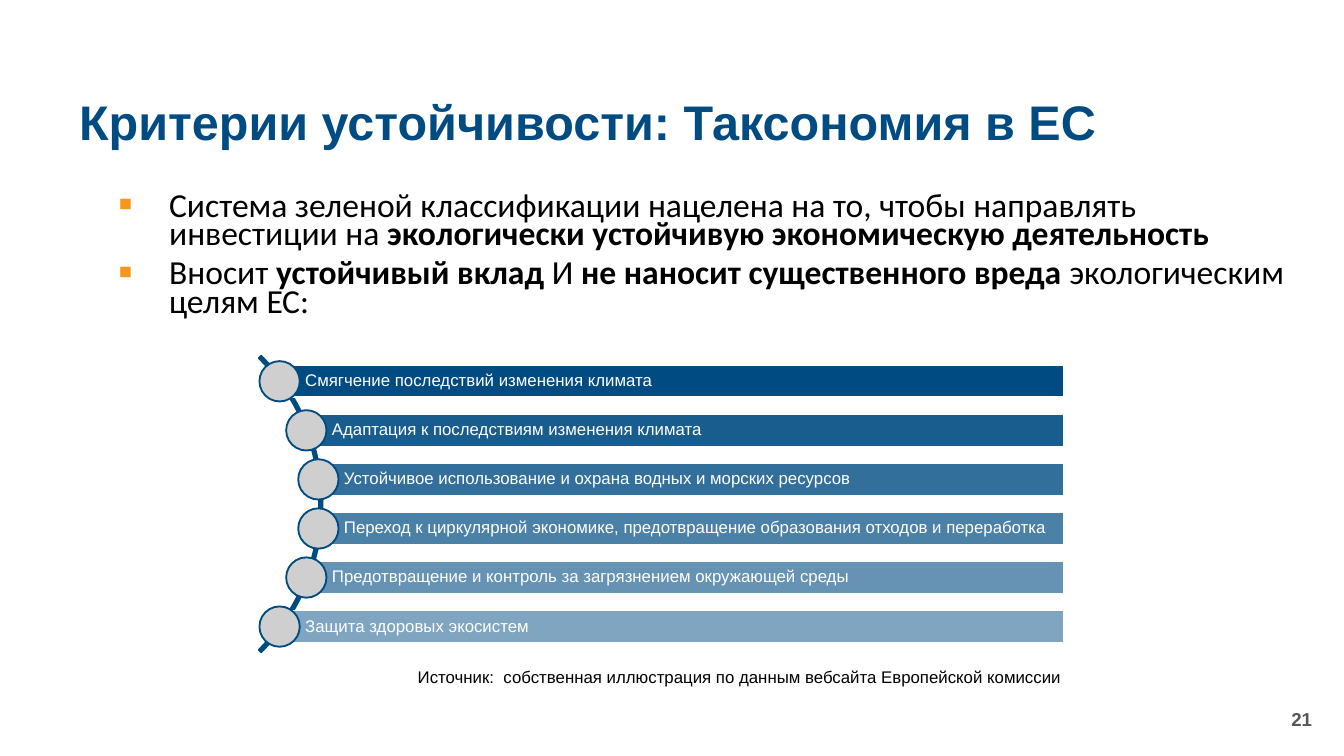
import math

import lxml.etree
import pptx
import pptx.dml.color
import pptx.enum.shapes
import pptx.enum.text
import pptx.oxml.ns
import pptx.util

Inches = pptx.util.Inches
Pt = pptx.util.Pt
Shapes = pptx.enum.shapes.MSO_SHAPE
Align = pptx.enum.text.PP_ALIGN
Anchor = pptx.enum.text.MSO_ANCHOR

BLUE = "004C82"
WHITE = "FFFFFF"
BLACK = "000000"

BULLETS = [
    [("Система зеленой классификации нацелена на то, чтобы направлять инвестиции на ", False),
     ("экологически устойчивую экономическую деятельность", True)],
    [("Вносит ", False),
     ("устойчивый вклад ", True),
     ("И ", False),
     ("не наносит существенного вреда ", True),
     ("экологическим целям ЕС:", False)],
]
GOALS = [
    "Смягчение последствий изменения климата",
    "Адаптация к последствиям изменения климата",
    "Устойчивое использование и охрана водных и морских ресурсов",
    "Переход к циркулярной экономике, предотвращение образования отходов и переработка",
    "Предотвращение и контроль за загрязнением окружающей среды",
    "Защита здоровых экосистем",
]


def color(value):
    return pptx.dml.color.RGBColor.from_string(value)


def add_child(parent, tag, **attributes):
    child = lxml.etree.SubElement(parent, pptx.oxml.ns.qn(tag))
    for name, value in attributes.items():
        child.set(name, value)
    return child


def add_span(para, text, size, ink, font="Arial", bold=False):
    span = para.add_run()
    span.text = text
    span.font.name = font
    span.font.size = Pt(size)
    span.font.bold = bold
    span.font.color.rgb = color(ink)


def add_box(page, left, top, width, height, anchor=Anchor.TOP):
    box = page.shapes.add_textbox(Inches(left), Inches(top), Inches(width), Inches(height))
    box.text_frame.word_wrap = True
    box.text_frame.vertical_anchor = anchor
    return box


def add_figure(page, kind, left, top, width, height, fill, line, opacity=100):
    figure = page.shapes.add_shape(kind, Inches(left), Inches(top), Inches(width), Inches(height))
    figure.shadow.inherit = False
    figure.fill.solid()
    figure.fill.fore_color.rgb = color(fill)
    figure.line.color.rgb = color(line)
    figure.line.width = Pt(1)
    if opacity < 100:
        tint = figure.fill._xPr.find(".//" + pptx.oxml.ns.qn("a:srgbClr"))
        add_child(tint, "a:alpha", val=str(opacity * 1000))
    return figure


def add_label(page, left, top, width, height, text, size, ink,
              bold=False, align=Align.LEFT, anchor=Anchor.TOP, spacing=1.0):
    box = add_box(page, left, top, width, height, anchor)
    para = box.text_frame.paragraphs[0]
    para.alignment = align
    para.line_spacing = spacing
    add_span(para, text, size, ink, bold=bold)


def add_bullets(page, left, top, width, height):
    frame = add_box(page, left, top, width, height).text_frame
    for index, spans in enumerate(BULLETS):
        para = frame.add_paragraph() if index else frame.paragraphs[0]
        para.line_spacing = 0.7
        para.space_before = Pt(6 if index else 0)
        properties = para._p.get_or_add_pPr()
        properties.set("marL", str(Inches(0.67)))
        properties.set("indent", str(Inches(-0.38)))
        add_child(add_child(properties, "a:buClr"), "a:srgbClr", val="F4971A")
        add_child(properties, "a:buSzPct", val="125000")
        add_child(properties, "a:buFont", typeface="Arial")
        add_child(properties, "a:buChar", char="▪")
        for text, bold in spans:
            add_span(para, text, 18, BLACK, "Calibri", bold)


def add_goal(page, left, middle, right, text, opacity):
    height, dot = 0.24, 0.3
    bar = add_figure(page, Shapes.RECTANGLE, left, middle - height / 2,
                     right - left, height, BLUE, WHITE, opacity)
    frame = bar.text_frame
    frame.word_wrap = True
    frame.vertical_anchor = Anchor.MIDDLE
    frame.margin_left = Inches(0.19)
    frame.margin_top = frame.margin_right = frame.margin_bottom = Inches(0.03)
    para = frame.paragraphs[0]
    para.alignment = Align.LEFT
    para.line_spacing = 0.9
    add_span(para, text, 9, WHITE)
    add_figure(page, Shapes.OVAL, left - dot / 2, middle - dot / 2, dot, dot, "CFCFCF", BLUE)


def add_goal_list(page, left, top, size, right):
    arc = add_figure(page, Shapes.BLOCK_ARC, left, top, size, size, BLUE, BLUE)
    for index, value in enumerate((189, 27, 0.008)):
        arc.adjustments[index] = value
    center_x, center_y = left + size / 2, top + size / 2
    radius, pitch = 1.54, 0.365
    for index, text in enumerate(GOALS):
        offset = (index - (len(GOALS) - 1) / 2) * pitch
        start = center_x + math.sqrt(radius ** 2 - offset ** 2)
        add_goal(page, start, center_y + offset, right, text, 100 - 10 * index)


def main():
    deck = pptx.Presentation()
    deck.slide_width = Inches(10)
    deck.slide_height = deck.slide_width * 9 // 16
    page = deck.slides.add_slide(deck.slide_layouts[6])
    add_bullets(page, 0.49, 1.4, 9.27, 3.22)
    add_label(page, 0.49, 0.63, 9.37, 0.59, "Критерии устойчивости: Таксономия в ЕС",
              26, BLUE, bold=True, anchor=Anchor.MIDDLE, spacing=0.9)
    add_label(page, 7.61, 5.2, 2.25, 0.3, "21", 10, "575756",
              bold=True, align=Align.RIGHT, anchor=Anchor.MIDDLE)
    add_goal_list(page, -0.72, 2.19, 3.12, 7.92)
    add_label(page, 3.01, 4.91, 5.03, 0.25,
              "Источник:  собственная иллюстрация по данным вебсайта Европейской комиссии",
              9, BLACK)
    deck.save("out.pptx")


if __name__ == "__main__":
    main()
